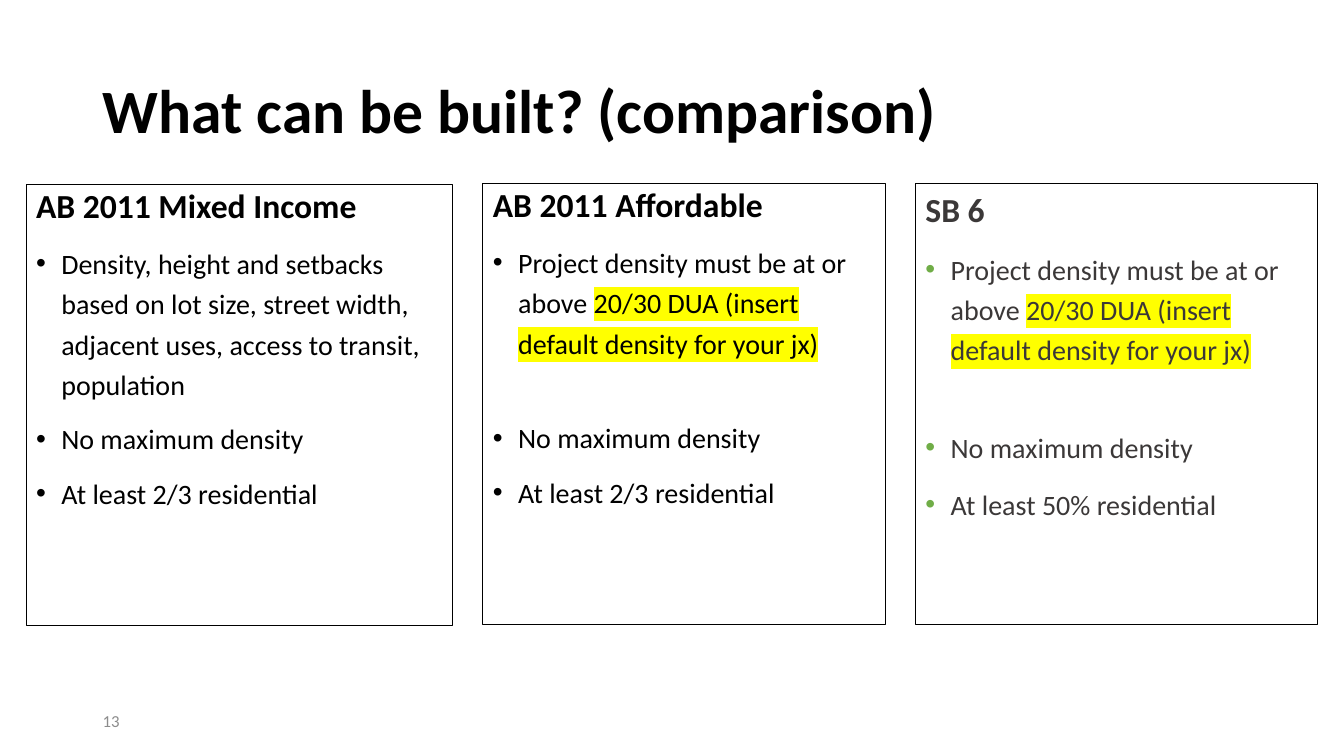
from lxml import etree
from pptx import Presentation
from pptx.dml.color import RGBColor
from pptx.enum import shapes, text
from pptx.oxml import ns
from pptx.util import Inches, Pt


def color(value):
    return RGBColor.from_string(value)


def set_font(paragraph, size, value, bold=False):
    font = paragraph.font
    font.name = "Calibri"
    font.size = Pt(size)
    font.bold = bold
    font.color.rgb = color(value)


presentation = Presentation()
presentation.slide_width = Inches(13.33)
presentation.slide_height = Inches(7.5)
slide = presentation.slides.add_slide(presentation.slide_layouts[5])

title = slide.shapes.title
title.left, title.top = Inches(0.92), Inches(0.4)
title.width, title.height = Inches(11.5), Inches(1.45)
title.text_frame.text = "What can be built? (comparison)"
title.text_frame.vertical_anchor = text.MSO_ANCHOR.MIDDLE
paragraph = title.text_frame.paragraphs[0]
paragraph.alignment = text.PP_ALIGN.LEFT
paragraph.line_spacing = 0.9
set_font(paragraph, 44, "000000", True)

density = ("Project density must be at or above ", "20/30 DUA (insert default density for your jx)")
setbacks = ("Density, height and setbacks based on lot size, street width, "
            "adjacent uses, access to transit, population", "")
no_maximum = ("No maximum density", "")
two_thirds = ("At least 2/3 residential", "")
half = ("At least 50% residential", "")

columns = [
    ("AB 2011 Mixed Income", 0.26, 1.83, 4.23, "000000", "000000", 0.9, 10,
     [setbacks, no_maximum, two_thirds]),
    ("AB 2011 Affordable", 4.79, 1.82, 3.99, "000000", "000000", 0.9, 10,
     [density, no_maximum, two_thirds]),
    ("SB 6", 9.08, 1.82, 3.99, "3B3838", "70AD47", 1.0, 12,
     [density, no_maximum, half]),
]

for heading, left, top, width, ink, bullet_color, heading_spacing, gap, items in columns:
    box = slide.shapes.add_shape(
        shapes.MSO_SHAPE.RECTANGLE, Inches(left), Inches(top), Inches(width), Inches(4.38))
    box.shadow.inherit = False
    box.fill.background()
    box.line.color.rgb = color("000000")
    box.line.width = Pt(0.75)
    frame = box.text_frame
    frame.word_wrap = True
    frame.vertical_anchor = text.MSO_ANCHOR.TOP

    paragraph = frame.paragraphs[0]
    paragraph.text = heading
    paragraph.alignment = text.PP_ALIGN.LEFT
    paragraph.line_spacing = heading_spacing
    paragraph.space_before = Pt(gap)
    set_font(paragraph, 24, ink, True)

    for plain, marked in items:
        paragraph = frame.add_paragraph()
        paragraph.alignment = text.PP_ALIGN.LEFT
        paragraph.line_spacing = 1.2
        paragraph.space_before = Pt(gap)
        properties = paragraph._p.get_or_add_pPr()
        properties.set("marL", str(Inches(0.25)))
        properties.set("indent", str(-Inches(0.25)))
        bullet_fill = etree.SubElement(properties, ns.qn("a:buClr"))
        etree.SubElement(bullet_fill, ns.qn("a:srgbClr"), val=bullet_color)
        etree.SubElement(properties, ns.qn("a:buFont"), typeface="Arial")
        etree.SubElement(properties, ns.qn("a:buChar"), char="•")
        set_font(paragraph, 20, ink)
        paragraph.add_run().text = plain
        if marked:
            run = paragraph.add_run()
            run.text = marked
            highlight = etree.SubElement(run._r.get_or_add_rPr(), ns.qn("a:highlight"))
            etree.SubElement(highlight, ns.qn("a:srgbClr"), val="FFFF00")
            paragraph.add_line_break()

number = slide.shapes.add_textbox(Inches(0.92), Inches(6.95), Inches(3), Inches(0.4))
number.text_frame.word_wrap = True
number.text_frame.vertical_anchor = text.MSO_ANCHOR.MIDDLE
number.text_frame.text = "13"
set_font(number.text_frame.paragraphs[0], 12, "8C8C8C")

presentation.save("out.pptx")
